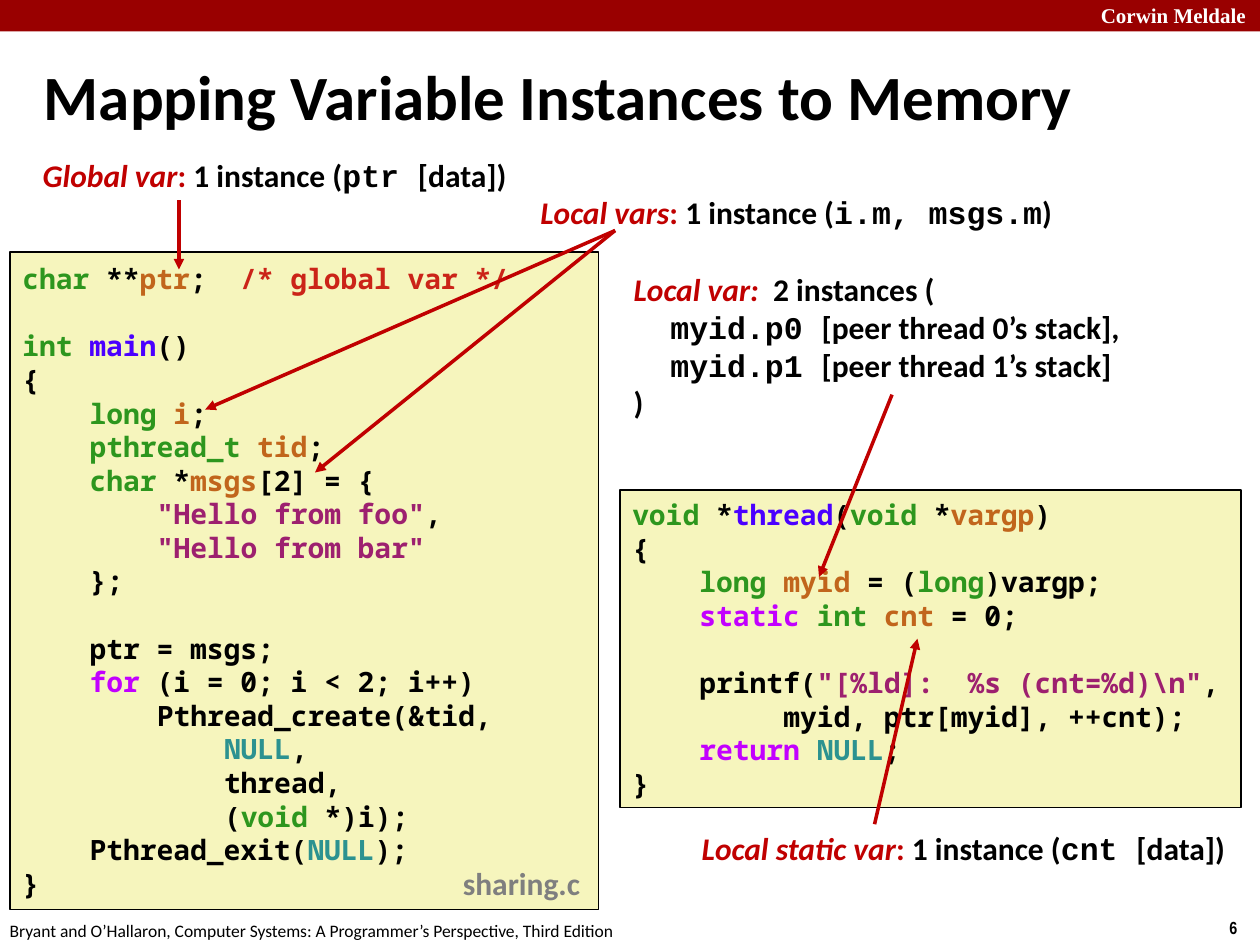
from dataclasses import dataclass
from typing import NamedTuple

from lxml import etree
from pptx import Presentation
from pptx.dml.color import RGBColor
from pptx.enum import shapes, text
from pptx.oxml import ns
from pptx.util import Pt

BLACK, WHITE, GRAY = "000000", "FFFFFF", "7F7F7F"
BANNER, ACCENT, CODE_FILL = "990000", "C00000", "F6F5BD"
TYPE, NAME, FUNCTION, KEYWORD = "2D961E", "C1651C", "4A00FF", "C200FF"
STRING, CONSTANT, COMMENT = "9D206F", "2C9290", "CB2418"
BODY, MONO, CODE = "Calibri", "Courier New", "Noto Sans Mono"
CODE_SIZE = 16
CHARACTER_WIDTH = 9.6
CODE_LINE_HEIGHT = 19.2


class Box(NamedTuple):
    left: float
    top: float
    width: float
    height: float


class Run(NamedTuple):
    text: str
    color: str = BLACK
    font: str = BODY
    italic: bool = False


class Line(NamedTuple):
    runs: list[Run]
    indent: float = 0
    space_before: float = 0


class Arrow(NamedTuple):
    start: tuple[float, float]
    end: tuple[float, float]


@dataclass
class TextStyle:
    size: float = 18
    bold: bool = True
    centered: bool = False
    middle: bool = False
    wrap: bool = True
    inset: float = 3.6


def rgb(color: str) -> RGBColor:
    return RGBColor.from_string(color)


def fill_text(shape, lines: list[Line], style: TextStyle) -> None:
    frame = shape.text_frame
    frame.word_wrap = style.wrap
    frame.margin_top = frame.margin_bottom = Pt(style.inset)
    frame.vertical_anchor = text.MSO_ANCHOR.MIDDLE if style.middle else text.MSO_ANCHOR.TOP
    for index, line in enumerate(lines):
        paragraph = frame.add_paragraph() if index else frame.paragraphs[0]
        paragraph.alignment = text.PP_ALIGN.CENTER if style.centered else text.PP_ALIGN.LEFT
        paragraph.space_before = Pt(line.space_before)
        if line.indent:
            properties = paragraph._p.get_or_add_pPr()
            properties.set("marL", str(Pt(line.indent)))
            properties.set("indent", "0")
        for part in line.runs:
            run = paragraph.add_run()
            run.text = part.text
            run.font.name = part.font
            run.font.size = Pt(style.size)
            run.font.bold = style.bold
            run.font.italic = part.italic
            run.font.color.rgb = rgb(part.color)


def add_text(slide, box: Box, lines: list[Line], style: TextStyle) -> None:
    fill_text(slide.shapes.add_textbox(*map(Pt, box)), lines, style)


def add_rectangle(slide, box: Box, fill: str, outline: str | None = None):
    shape = slide.shapes.add_shape(shapes.MSO_SHAPE.RECTANGLE, *map(Pt, box))
    shape.shadow.inherit = False
    shape.fill.solid()
    shape.fill.fore_color.rgb = rgb(fill)
    if outline:
        shape.line.color.rgb = rgb(outline)
        shape.line.width = Pt(1)
    else:
        shape.line.fill.background()
    return shape


def add_arrow(slide, arrow: Arrow) -> None:
    connector = slide.shapes.add_connector(
        shapes.MSO_CONNECTOR.STRAIGHT, *map(Pt, arrow.start + arrow.end))
    connector.line.color.rgb = rgb(ACCENT)
    connector.line.width = Pt(2)
    etree.SubElement(connector.line._get_or_add_ln(), ns.qn("a:tailEnd"), type="triangle")
    etree.SubElement(connector._element.spPr, ns.qn("a:effectLst"))


def code(columns: int, *tokens: str | tuple[str, str], gap: bool = False) -> Line:
    """One code line: plain strings are black, pairs are (text, colour)."""
    runs = [Run(token, font=CODE) if isinstance(token, str) else Run(*token, font=CODE)
            for token in tokens]
    return Line(runs, columns * CHARACTER_WIDTH, CODE_LINE_HEIGHT if gap else 0)


def add_code(slide, box: Box, lines: list[Line]) -> None:
    fill_text(add_rectangle(slide, box, CODE_FILL, BLACK), lines,
              TextStyle(size=CODE_SIZE, middle=True))


def add_instance_label(slide, box: Box, scope: str, variables: str, ending: str) -> None:
    runs = [Run(scope, ACCENT, italic=True), Run(": ", ACCENT), Run("1 instance ("),
            Run(variables, font=MONO), Run(ending)]
    add_text(slide, box, [Line(runs)],
             TextStyle(centered=True, middle=True, wrap=False, inset=0))


MAIN_CODE = [
    code(0, ("char", TYPE), " **", ("ptr", NAME), ";  ", ("/* global var */", COMMENT)),
    code(0, ("int ", TYPE), ("main", FUNCTION), "()", gap=True),
    code(0, "{"),
    code(4, ("long ", TYPE), ("i", NAME), ";"),
    code(4, ("pthread_t ", TYPE), ("tid", NAME), ";"),
    code(4, ("char", TYPE), " *", ("msgs", NAME), "[2] = {"),
    code(8, ('"Hello from foo"', STRING), ","),
    code(8, ('"Hello from bar"', STRING)),
    code(4, "};"),
    code(4, "ptr = msgs;", gap=True),
    code(4, ("for", KEYWORD), " (i = 0; i < 2; i++)"),
    code(8, "Pthread_create(&tid,"),
    code(12, ("NULL", CONSTANT), ","),
    code(12, "thread,"),
    code(12, "(", ("void", TYPE), " *)i);"),
    code(4, "Pthread_exit(", ("NULL", CONSTANT), ");"),
    code(0, "}"),
]
THREAD_CODE = [
    code(0, ("void", TYPE), " *", ("thread", FUNCTION), "(", ("void", TYPE), " *",
         ("vargp", NAME), ")"),
    code(0, "{"),
    code(4, ("long ", TYPE), ("myid", NAME), " = (", ("long", TYPE), ")vargp;"),
    code(4, ("static ", KEYWORD), ("int ", TYPE), ("cnt", NAME), " = 0;"),
    code(4, "printf(", (r'"[%ld]:  %s (cnt=%d)\n"', STRING), ",", gap=True),
    code(9, "myid, ptr[myid], ++cnt);"),
    code(4, ("return ", KEYWORD), ("NULL", CONSTANT), ";"),
    code(0, "}"),
]
PEER_INSTANCES = [
    Line([Run("Local var:  ", ACCENT, italic=True), Run("2 instances (")]),
    *(Line([Run(f"myid.p{peer} ", font=MONO), Run(f"[peer thread {peer}’s stack]{comma}")], 21)
      for peer, comma in enumerate([",", ""])),
    Line([Run(")")]),
]
LOCALS_ORIGIN = (351.5, 131.75)
ARROWS = [
    Arrow((102.25, 114.5), (102.25, 154)),
    Arrow((499.75, 471), (524.25, 365)),
    Arrow(LOCALS_ORIGIN, (117.25, 234)),
    Arrow(LOCALS_ORIGIN, (180, 270)),
    Arrow((509.75, 225.5), (468, 329.75)),
]


def main() -> None:
    presentation = Presentation()
    presentation.slide_width, presentation.slide_height = Pt(720), Pt(540)
    slide = presentation.slides.add_slide(presentation.slide_layouts[6])

    add_rectangle(slide, Box(0, 0, 720, 18), BANNER)
    add_text(slide, Box(622, -2, 103, 22),
             [Line([Run("Corwin Meldale", WHITE, "Times New Roman")])], TextStyle(size=12))
    add_text(slide, Box(695.5, 520.5, 24.5, 19.5),
             [Line([Run("6", font="Arial Narrow")])], TextStyle(size=10))
    add_text(slide, Box(-1.5, 522, 366, 19.5),
             [Line([Run("Bryant and O’Hallaron, Computer Systems: "
                        "A Programmer’s Perspective, Third Edition")])],
             TextStyle(size=10, bold=False))

    add_code(slide, Box(5.75, 144, 336.25, 375.75), MAIN_CODE)
    add_code(slide, Box(354.25, 280, 355, 181.5), THREAD_CODE)
    add_text(slide, Box(18, 23.75, 706.25, 61),
             [Line([Run("Mapping Variable Instances to Memory")])],
             TextStyle(size=36, middle=True))

    add_instance_label(slide, Box(15.75, 89.25, 282.25, 21.75), "Global var", "ptr ", "[data])")
    add_instance_label(slide, Box(391.75, 473.75, 317.5, 21.75),
                       "Local static var", "cnt ", "[data])")
    add_instance_label(slide, Box(300.25, 110.25, 309.5, 21.75), "Local vars", "i.m, msgs.m", ")")
    add_text(slide, Box(355, 154, 304.5, 87), PEER_INSTANCES, TextStyle(middle=True, inset=0))
    for arrow in ARROWS:
        add_arrow(slide, arrow)
    add_text(slide, Box(257, 490.25, 82, 29), [Line([Run("sharing.c", GRAY)])],
             TextStyle(centered=True, wrap=False))

    presentation.save("out.pptx")


if __name__ == "__main__":
    main()
